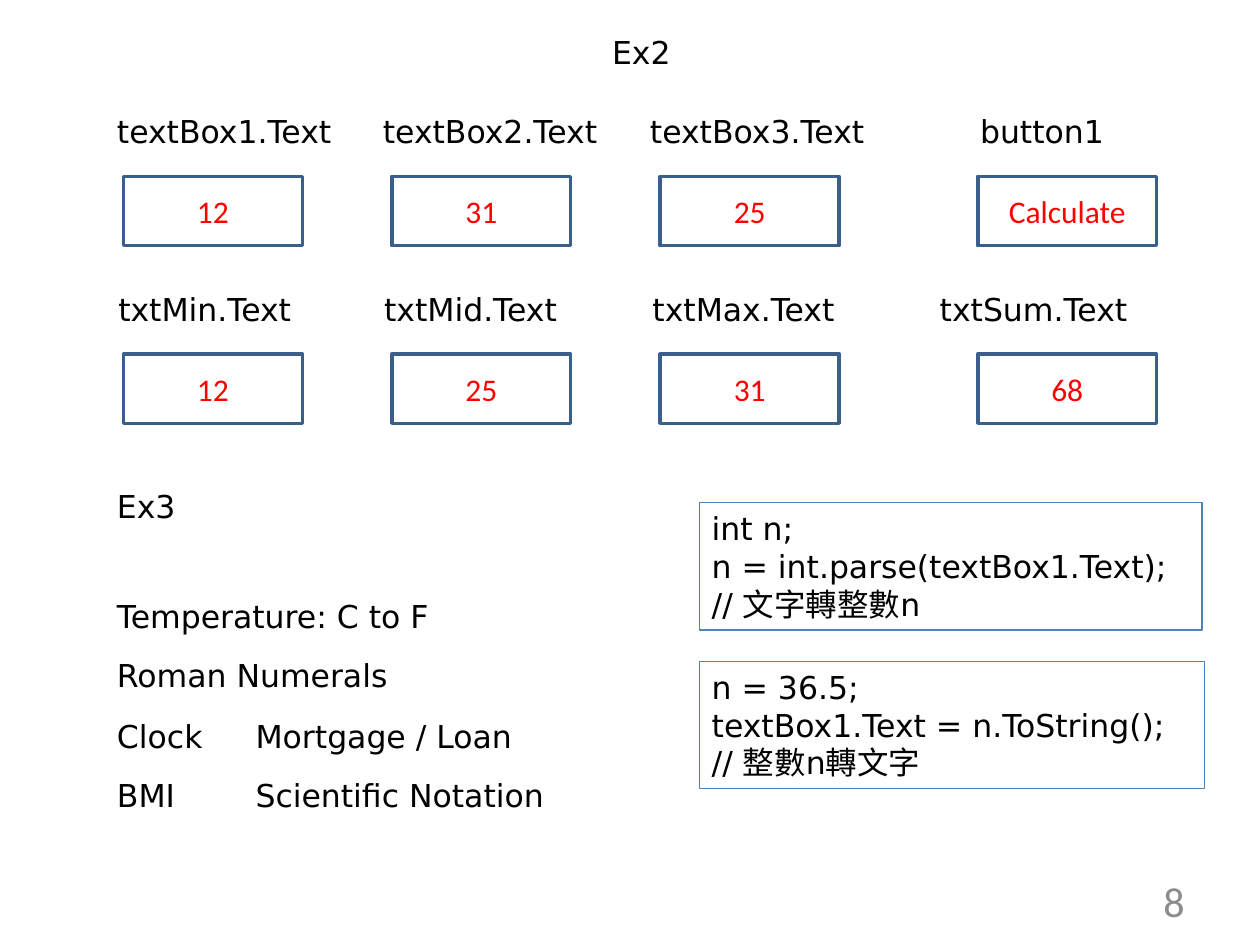
import pptx
import pptx.dml.color
import pptx.enum.shapes
import pptx.enum.text
import pptx.util

PX = 9144
ALIGN = pptx.enum.text.PP_ALIGN
ANCHOR = pptx.enum.text.MSO_ANCHOR


def rgb(value):
    return pptx.dml.color.RGBColor.from_string(value)


class Deck:
    """Holds the text style and the current slide, and adds elements in px."""

    label_font = "DejaVu Sans"
    value_font = "Calibri"
    size = 18

    def __init__(self, width, height):
        self.prs = pptx.Presentation()
        self.prs.slide_width = width * PX
        self.prs.slide_height = height * PX
        self.slide = self.prs.slides.add_slide(self.prs.slide_layouts[6])

    def set_text(self, sp, lines, font, color, size=size, align=ALIGN.LEFT,
                 anchor=ANCHOR.TOP, fit=False):
        tf = sp.text_frame
        tf.word_wrap = not fit
        if fit:
            tf.auto_size = pptx.enum.text.MSO_AUTO_SIZE.SHAPE_TO_FIT_TEXT
        tf.vertical_anchor = anchor
        for i, line in enumerate(lines):
            p = tf.paragraphs[0] if i == 0 else tf.add_paragraph()
            p.text = line
            p.alignment = align
            p.font.name = font
            p.font.size = pptx.util.Pt(size)
            p.font.color.rgb = rgb(color)

    def rect(self, x, y, w, h, line, weight):
        sp = self.slide.shapes.add_shape(
            pptx.enum.shapes.MSO_SHAPE.RECTANGLE, x * PX, y * PX, w * PX, h * PX)
        sp.shadow.inherit = False
        sp.fill.background()
        sp.line.color.rgb = rgb(line)
        sp.line.width = pptx.util.Pt(weight)
        return sp

    def label(self, x, y, w, text):
        sp = self.slide.shapes.add_textbox(x * PX, y * PX, w * PX, 40 * PX)
        self.set_text(sp, [text], self.label_font, "000000", fit=True)

    def field(self, x, y, text):
        sp = self.rect(x, y, 142, 55, "3A5F8C", 2)
        self.set_text(sp, [text], self.value_font, "FF0000",
                      align=ALIGN.CENTER, anchor=ANCHOR.MIDDLE)

    def code(self, x, y, w, lines):
        sp = self.rect(x, y, w, 101, "4F81BD", 0.75)
        self.set_text(sp, lines, self.label_font, "000000", fit=True)

    def page_number(self, text):
        sp = self.slide.shapes.add_textbox(717 * PX, 695 * PX, 233 * PX, 40 * PX)
        self.set_text(sp, [text], self.value_font, "8C8C8C", size=24,
                      align=ALIGN.RIGHT, anchor=ANCHOR.MIDDLE)


FIELD_X = [98, 311, 524, 776]
FORM_ROWS = [
    (84, [(83, 198, "textBox1.Text", "12"), (294, 198, "textBox2.Text", "31"),
          (506, 198, "textBox3.Text", "25"), (768, 121, "button1", "Calculate")]),
    (225, [(84, 161, "txtMin.Text", "12"), (295, 161, "txtMid.Text", "25"),
           (508, 168, "txtMax.Text", "31"), (736, 175, "txtSum.Text", "68")]),
]
EXERCISES = [
    [(83, 276, "Temperature: C to F")],
    [(83, 237, "Roman Numerals")],
    [(83, 88, "Clock"), (193, 229, "Mortgage / Loan")],
    [(83, 69, "BMI"), (193, 251, "Scientific Notation")],
]


def main():
    deck = Deck(1000, 750)
    deck.label(476, 21, 67, "Ex2")
    for y, cells in FORM_ROWS:
        for field_x, (x, w, name, value) in zip(FIELD_X, cells):
            deck.label(x, y, w, name)
            deck.field(field_x, y + 56, value)
    deck.label(83, 382, 67, "Ex3")
    for i, row in enumerate(EXERCISES):
        for x, w, text in row:
            deck.label(x, round(469 + 47.3 * i), w, text)
    deck.code(555, 399, 399, ["int n;", "n = int.parse(textBox1.Text);",
                              "// 文字轉整數n"])
    deck.code(555, 525, 401, ["n = 36.5;", "textBox1.Text = n.ToString();",
                              "// 整數n轉文字"])
    deck.page_number("8")
    deck.prs.save("out.pptx")


if __name__ == "__main__":
    main()
